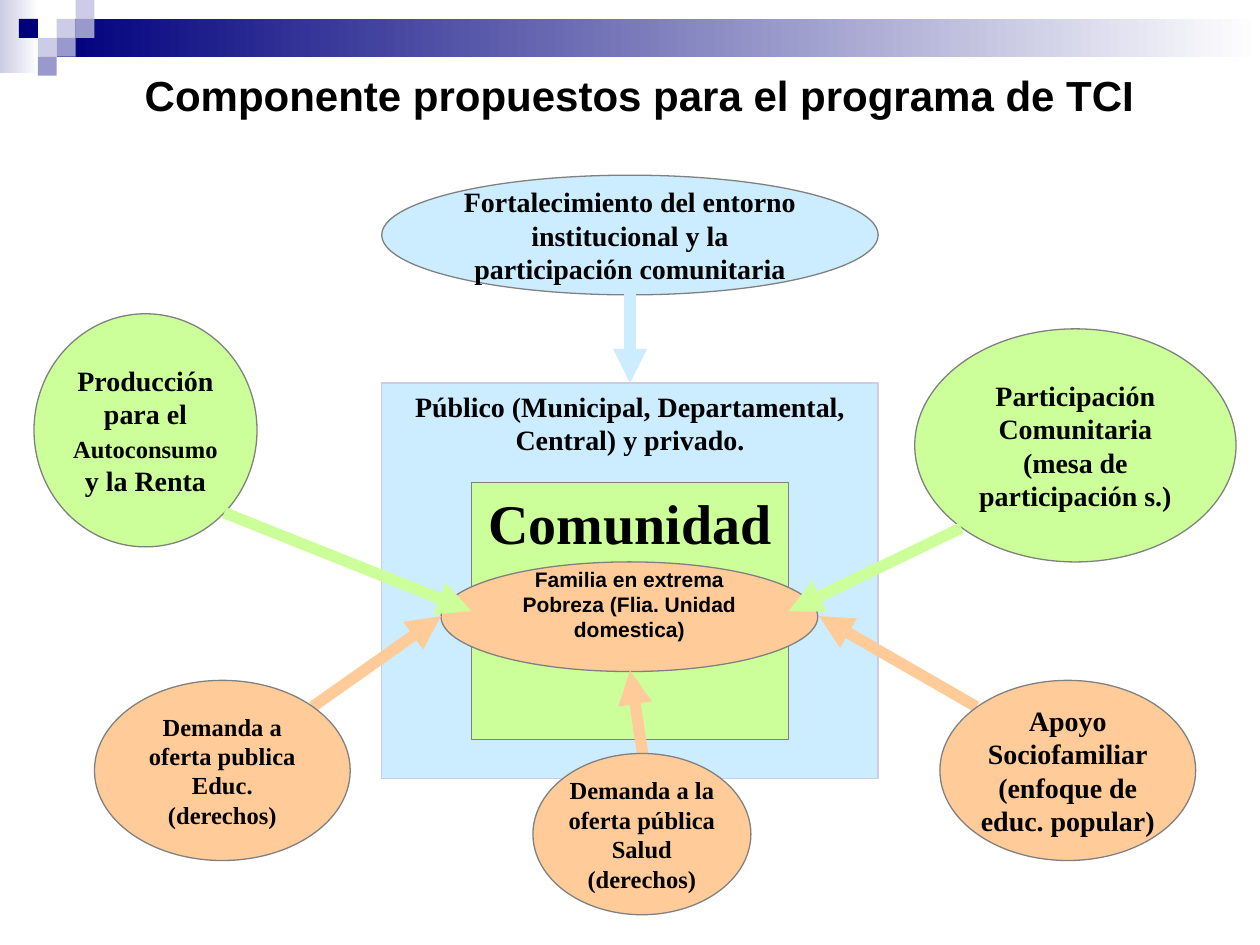
"""Build the slide on the proposed components of the TCI programme."""
from dataclasses import dataclass
from typing import Any, NamedTuple

from lxml.etree import SubElement
from pptx import Presentation
from pptx.dml.color import RGBColor
from pptx.enum.shapes import MSO_CONNECTOR, MSO_SHAPE
from pptx.enum.text import MSO_ANCHOR, PP_ALIGN
from pptx.oxml.ns import qn
from pptx.util import Inches, Pt


@dataclass(frozen=True)
class Theme:
    navy: str = "00007D"
    lilac: str = "9999CC"
    pale_lilac: str = "CCCCE6"
    white: str = "FFFFFF"
    black: str = "000000"
    grey: str = "808080"
    blue: str = "CCECFF"
    green: str = "CCFF99"
    orange: str = "FFCC99"
    title_shadow: str = "7F7FBF"
    serif: str = "Times New Roman"
    sans: str = "Arial"
    title_size: float = 24
    heading_size: float = 32
    body_size: float = 16
    small_size: float = 14
    family_size: float = 12
    outline: float = 0.75
    arrow: float = 6.5


THEME = Theme()
PIXEL = 0.15
DEFAULT_INSETS = (0.1, 0.05, 0.1, 0.05)
NO_INSETS = (0, 0, 0, 0)


class Box(NamedTuple):
    left: float
    top: float
    width: float
    height: float


class Arrow(NamedTuple):
    start: tuple[float, float]
    end: tuple[float, float]
    color: str


@dataclass(frozen=True)
class Component:
    """A labelled outline; text between asterisks is set in the small size."""
    box: Box
    fill: str
    paragraphs: tuple[str, ...]
    size: float = THEME.body_size
    font: str = THEME.serif
    outline: str = THEME.grey
    geometry: MSO_SHAPE = MSO_SHAPE.OVAL
    anchor: MSO_ANCHOR = MSO_ANCHOR.MIDDLE
    insets: tuple[float, ...] = NO_INSETS


SETTINGS = (
    Component(Box(3.03, 1.39, 3.94, 0.95), THEME.blue,
              ("Fortalecimiento del entorno institucional y la participación comunitaria",)),
    Component(Box(3.03, 3.04, 3.94, 3.14), THEME.blue,
              ("Público (Municipal, Departamental, Central) y privado.",),
              outline=THEME.pale_lilac, geometry=MSO_SHAPE.RECTANGLE,
              anchor=MSO_ANCHOR.TOP, insets=DEFAULT_INSETS),
    Component(Box(3.74, 3.83, 2.52, 2.04), THEME.green, ("Comunidad",),
              size=THEME.heading_size, geometry=MSO_SHAPE.RECTANGLE,
              anchor=MSO_ANCHOR.TOP, insets=DEFAULT_INSETS),
    Component(Box(3.5, 4.46, 2.99, 0.87), THEME.orange,
              ("Familia en extrema Pobreza (Flia. Unidad domestica)",),
              size=THEME.family_size, font=THEME.sans, insets=(0.1, 0.05, 0.1, 0.25)),
    Component(Box(7.26, 2.61, 2.55, 1.85), THEME.green,
              ("Participación", "Comunitaria", "(mesa de participación s.)")),
    Component(Box(0.27, 2.49, 1.77, 1.85), THEME.green,
              ("Producción para el *Autoconsumo* y la Renta",)),
)
ARROWS = (
    Arrow((5, 2.33), (5, 3.04), THEME.blue),
    Arrow((7.75, 5.61), (6.5, 4.89), THEME.orange),
    Arrow((2.48, 5.61), (3.5, 4.89), THEME.orange),
    Arrow((5.1, 5.98), (5, 5.32), THEME.orange),
    Arrow((7.63, 4.19), (6.26, 4.85), THEME.green),
    Arrow((1.78, 4.07), (3.74, 4.85), THEME.green),
)
DEMANDS = (
    Component(Box(0.75, 5.4, 2.03, 1.43), THEME.orange,
              ("Demanda a oferta publica Educ. (derechos)",),
              size=THEME.small_size, insets=DEFAULT_INSETS),
    Component(Box(7.46, 5.4, 2.03, 1.43), THEME.orange,
              ("Apoyo Sociofamiliar", "(enfoque de educ. popular)")),
    Component(Box(4.23, 5.98, 1.73, 1.28), THEME.orange,
              ("Demanda a la oferta pública Salud (derechos)",), size=THEME.small_size),
)
GRADIENT_BANDS = (
    (Box(0, 0, 0.31, 0.58), THEME.pale_lilac),
    (Box(0.45, 0.15, 9.55, 0.3), THEME.navy),
)
PIXELS = (
    (3, 1, THEME.pale_lilac), (4, 0, THEME.pale_lilac), (4, 1, THEME.lilac),
    (2, 2, THEME.pale_lilac), (1, 1, THEME.navy), (3, 2, THEME.lilac),
    (2, 3, THEME.lilac),
)


def rgb(color: str) -> RGBColor:
    return RGBColor.from_string(color)


def apply(target: Any, values: dict[str, Any]) -> None:
    for name, value in values.items():
        setattr(target, name, value)


def style_font(font: Any, name: str, size: float) -> None:
    apply(font, {"name": name, "size": Pt(size), "bold": True})
    font.color.rgb = rgb(THEME.black)


def add_outline(slide: Any, geometry: MSO_SHAPE, box: Box) -> Any:
    outline = slide.shapes.add_shape(geometry, *map(Inches, box))
    outline.shadow.inherit = False
    return outline


def draw_band(slide: Any, box: Box, color: str) -> None:
    band = add_outline(slide, MSO_SHAPE.RECTANGLE, box)
    band.fill.gradient()
    band.fill.gradient_angle = 0
    for stop, shade in zip(band.fill.gradient_stops, (color, THEME.white)):
        stop.color.rgb = rgb(shade)
    band.line.fill.background()


def draw_pixel(slide: Any, column: int, row: int, color: str) -> None:
    box = Box(column * PIXEL, row * PIXEL, PIXEL, PIXEL)
    pixel = add_outline(slide, MSO_SHAPE.RECTANGLE, box)
    pixel.fill.solid()
    pixel.fill.fore_color.rgb = rgb(color)
    pixel.line.fill.background()


def draw_title(slide: Any, wording: str) -> None:
    title = slide.shapes.title
    apply(title, dict(zip(("left", "top", "width", "height"),
                          map(Inches, (0.43, 0.36, 9.29, 0.79)))))
    title.text_frame.vertical_anchor = MSO_ANCHOR.MIDDLE
    paragraph = title.text_frame.paragraphs[0]
    paragraph.alignment = PP_ALIGN.CENTER
    run = paragraph.add_run()
    run.text = wording
    style_font(run.font, THEME.sans, THEME.title_size)
    effects = SubElement(run.font.fill._xPr, qn("a:effectLst"))
    run.font.color.rgb = rgb(THEME.black)
    shadow = SubElement(effects, qn("a:outerShdw"), dist="35921", dir="2700000")
    SubElement(shadow, qn("a:srgbClr"), val=THEME.title_shadow)
    properties = effects.getparent()
    properties.insert(1, effects)


def draw_component(slide: Any, component: Component) -> None:
    outline = add_outline(slide, component.geometry, component.box)
    outline.fill.solid()
    outline.fill.fore_color.rgb = rgb(component.fill)
    outline.line.color.rgb = rgb(component.outline)
    outline.line.width = Pt(THEME.outline)
    frame = outline.text_frame
    margins = ("margin_left", "margin_top", "margin_right", "margin_bottom")
    apply(frame, {"word_wrap": True, "vertical_anchor": component.anchor,
                  **dict(zip(margins, map(Inches, component.insets)))})
    for index, wording in enumerate(component.paragraphs):
        paragraph = frame.add_paragraph() if index else frame.paragraphs[0]
        paragraph.alignment = PP_ALIGN.CENTER
        for part, words in enumerate(wording.split("*")):
            run = paragraph.add_run()
            run.text = words
            style_font(run.font, component.font, THEME.small_size if part % 2 else component.size)


def draw_arrow(slide: Any, arrow: Arrow) -> None:
    connector = slide.shapes.add_connector(
        MSO_CONNECTOR.STRAIGHT, *map(Inches, arrow.start + arrow.end))
    connector.line.color.rgb = rgb(arrow.color)
    connector.line.width = Pt(THEME.arrow)
    SubElement(connector.line._get_or_add_ln(), qn("a:tailEnd"), type="triangle")
    SubElement(connector._element.spPr, qn("a:effectLst"))


def main() -> None:
    deck = Presentation()
    apply(deck, {"slide_width": Inches(10), "slide_height": Inches(7.5)})
    slide = deck.slides.add_slide(deck.slide_layouts[5])
    for band in GRADIENT_BANDS:
        draw_band(slide, *band)
    for pixel in PIXELS:
        draw_pixel(slide, *pixel)
    draw_title(slide, "Componente propuestos para el programa de TCI")
    for component in SETTINGS:
        draw_component(slide, component)
    for arrow in ARROWS:
        draw_arrow(slide, arrow)
    for component in DEMANDS:
        draw_component(slide, component)
    deck.save("out.pptx")


if __name__ == "__main__":
    main()
